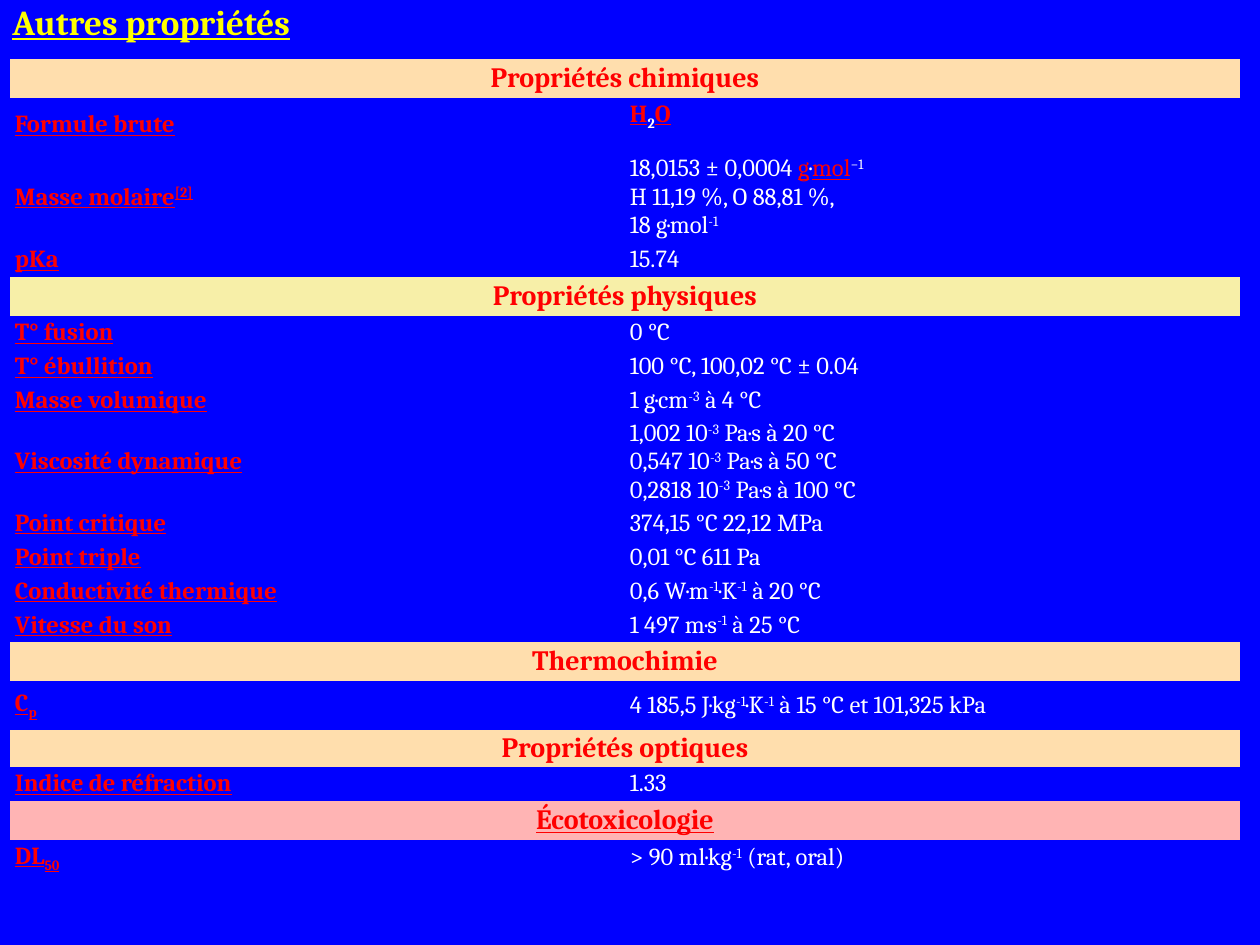
from copy import deepcopy

from pptx import Presentation
from pptx.dml.color import RGBColor
from pptx.enum.text import MSO_ANCHOR, PP_ALIGN
from pptx.oxml.ns import qn
from pptx.util import Pt

PX = 914400 // 126
BLUE = RGBColor(0x00, 0x00, 0xFF)
RED = RGBColor(0xFF, 0x00, 0x00)
WHITE = RGBColor(0xFF, 0xFF, 0xFF)
YELLOW = RGBColor(0xFF, 0xFF, 0x00)
PEACH = RGBColor(0xFF, 0xDE, 0xAD)
CREAM = RGBColor(0xF7, 0xEF, 0xA8)
PINK = RGBColor(0xFF, 0xB4, 0xB4)
NO_STYLE_NO_GRID = "{2D5ABB26-0587-4C30-8999-92F81FD0307C}"

TITLE = {"size": Pt(20), "bold": True, "underline": True, "color": YELLOW}
HEADING = {"size": Pt(16), "bold": True, "underline": False, "color": RED}
LINKED_HEADING = HEADING | {"underline": True}
LABEL = {"size": Pt(14), "bold": True, "underline": True, "color": RED}
VALUE = {"size": Pt(14), "bold": False, "underline": False, "color": WHITE}
FORMULA = VALUE | {"bold": True}
LINK = {"underline": True, "color": RED}
BASELINES = {"^": "30000", "_": "-25000"}

ROWS = [
    (39, "Propriétés chimiques", HEADING, PEACH),
    (52, "Formule brute", "*H|_2|*O", FORMULA),
    (91, "Masse molaire|^[2]",
     "18,0153 ± 0,0004 |*g|·|*mol|^−1|\nH 11,19 %, O 88,81 %,\n18 g·mol|^-1", VALUE),
    (34, "pKa", "15.74", VALUE),
    (39, "Propriétés physiques", HEADING, CREAM),
    (34, "T° fusion", "0 °C", VALUE),
    (34, "T° ébullition", "100 °C, 100,02 °C ± 0.04", VALUE),
    (34, "Masse volumique", "1 g·cm|^-3| à 4 °C", VALUE),
    (88, "Viscosité dynamique",
     "1,002 10|^-3| Pa·s à 20 °C\n0,547 10|^-3| Pa·s à 50 °C\n0,2818 10|^-3| Pa·s à 100 °C", VALUE),
    (34, "Point critique", "374,15 °C 22,12 MPa", VALUE),
    (34, "Point triple", "0,01 °C 611 Pa", VALUE),
    (34, "Conductivité thermique", "0,6 W·m|^-1|·K|^-1| à 20 °C", VALUE),
    (34, "Vitesse du son", "1 497 m·s|^-1| à 25 °C", VALUE),
    (39, "Thermochimie", HEADING, PEACH),
    (49, "C|_p", "4 185,5 J·kg|^-1|·K|^-1| à 15 °C et 101,325 kPa", VALUE),
    (37, "Propriétés optiques", HEADING, PEACH),
    (34, "Indice de réfraction", "1.33", VALUE),
    (39, "Écotoxicologie", LINKED_HEADING, PINK),
    (36, "DL|_50", "> 90 ml·kg|^-1| (rat, oral)", VALUE),
]


def add_run(paragraph, text, format_values, baseline):
    run = paragraph.add_run()
    run.text = text
    run.font.name = "Cambria"
    for name, value in format_values.items():
        if name == "color":
            run.font.color.rgb = value
        else:
            setattr(run.font, name, value)
    if baseline:
        run.font._element.set("baseline", baseline)


def write(paragraph, marked_text, format_values):
    for part in marked_text.split("|"):
        mark = part[0] if part[0] in "*^_" else ""
        run_format = format_values | (LINK if mark == "*" else {})
        for number, line in enumerate(part.removeprefix(mark).split("\n")):
            if number:
                paragraph.add_line_break()
            if line:
                add_run(paragraph, line, run_format, BASELINES.get(mark))
    for line_break in paragraph._p.findall(qn("a:br")):
        line_break.append(deepcopy(paragraph.runs[0].font._element))


presentation = Presentation()
presentation.slide_width = 1260 * PX
presentation.slide_height = 945 * PX
slide = presentation.slides.add_slide(presentation.slide_layouts[6])
slide.background.fill.solid()
slide.background.fill.fore_color.rgb = BLUE

table_height = sum(row[0] for row in ROWS)
table_shape = slide.shapes.add_table(len(ROWS), 2, 10 * PX, 59 * PX, 1230 * PX, table_height * PX)
table = table_shape.table
table.first_row = False
table.horz_banding = False
table._tbl.tblPr.find(qn("a:tableStyleId")).text = NO_STYLE_NO_GRID

for index, (height, label, *details) in enumerate(ROWS):
    table.rows[index].height = height * PX
    left_cell, right_cell = table.cell(index, 0), table.cell(index, 1)
    for cell in (left_cell, right_cell):
        cell.fill.background()
        cell.vertical_anchor = MSO_ANCHOR.MIDDLE
        cell.margin_left = cell.margin_right = 5 * PX
        cell.margin_top = cell.margin_bottom = 2 * PX
    left_paragraph = left_cell.text_frame.paragraphs[0]
    if isinstance(details[0], dict):
        heading_format, band_color = details
        left_cell.merge(right_cell)
        left_cell.fill.solid()
        left_cell.fill.fore_color.rgb = band_color
        left_paragraph.alignment = PP_ALIGN.CENTER
        write(left_paragraph, label, heading_format)
    else:
        value, value_format = details
        write(left_paragraph, label, LABEL)
        write(right_cell.text_frame.paragraphs[0], value, value_format)
        if value_format is FORMULA:
            right_cell.margin_bottom = 20 * PX

title = slide.shapes.add_textbox(0, -6 * PX, 320 * PX, 55 * PX)
title.text_frame.word_wrap = False
write(title.text_frame.paragraphs[0], "Autres propriétés", TITLE)

presentation.save("out.pptx")
